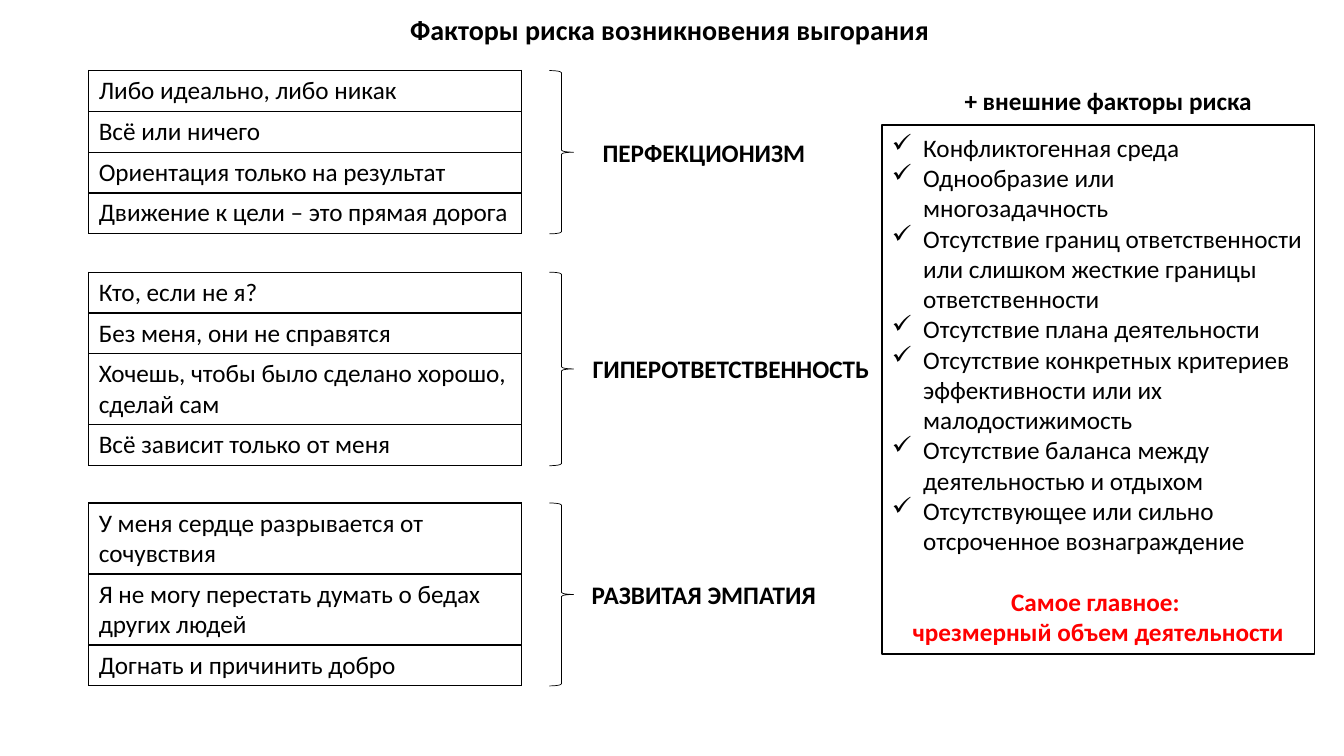
import pptx
import pptx.util
import pptx.dml.color
import pptx.enum.shapes
import pptx.enum.text
import pptx.oxml
import pptx.oxml.ns

RGBColor = pptx.dml.color.RGBColor
BLACK = RGBColor(0, 0, 0)
WHITE = RGBColor(255, 255, 255)
RED = RGBColor(255, 0, 0)

# The slide is a grid of square cells, 133.33 columns by 75 rows.
CELL = pptx.util.Inches(0.1)
COLS, ROWS = 133.33, 75

PANEL_W = 42.9
TABLE_X, BRACE_X, BRACE_W = 8.8, 54.5, 2.4
LABEL_H = 4
ONE_LINE, TWO_LINES = 4.05, 7.05
INDENT = pptx.util.Inches(0.31)

BODY = {"name": "Calibri", "size": pptx.util.Pt(18), "bold": False}
STRONG = {**BODY, "bold": True}
TITLE = {**STRONG, "size": pptx.util.Pt(20)}

# Top row, statements with row heights, label, label column and width
GROUPS = [
    (7, [("Либо идеально, либо никак", ONE_LINE),
         ("Всё или ничего", ONE_LINE),
         ("Ориентация только на результат", ONE_LINE),
         ("Движение к цели – это прямая дорога", ONE_LINE)],
     "ПЕРФЕКЦИОНИЗМ", 58.8, 22.3),
    (27, [("Кто, если не я?", ONE_LINE),
          ("Без меня, они не справятся", ONE_LINE),
          ("Хочешь, чтобы было сделано хорошо, сделай сам", TWO_LINES),
          ("Всё зависит только от меня", ONE_LINE)],
     "ГИПЕРОТВЕТСТВЕННОСТЬ", 57.8, 29.7),
    (49.9, [("У меня сердце разрывается от сочувствия", TWO_LINES),
            ("Я не могу перестать думать о бедах других людей", TWO_LINES),
            ("Догнать и причинить добро", ONE_LINE)],
     "РАЗВИТАЯ ЭМПАТИЯ", 57.7, 24.5),
]

EXTERNAL = [
    "Конфликтогенная среда",
    "Однообразие или многозадачность",
    "Отсутствие границ ответственности или слишком жесткие границы ответственности",
    "Отсутствие плана деятельности",
    "Отсутствие конкретных критериев эффективности или их малодостижимость",
    "Отсутствие баланса между деятельностью и отдыхом",
    "Отсутствующее или сильно отсроченное вознаграждение",
]
MAIN_POINT = ["Самое главное: ", "чрезмерный объем деятельности"]


def cells(*counts):
    return [round(n * CELL) for n in counts]


def write(p, text, fmt, color=BLACK):
    r = p.add_run()
    r.text = text
    for name, value in fmt.items():
        setattr(r.font, name, value)
    r.font.color.rgb = color


def add_label(s, text, x, y, w, h, fmt):
    tf = s.shapes.add_textbox(*cells(x, y, w, h)).text_frame
    tf.word_wrap = False
    tf.auto_size = pptx.enum.text.MSO_AUTO_SIZE.SHAPE_TO_FIT_TEXT
    write(tf.paragraphs[0], text, fmt)


def add_outline(s, kind, x, y, w, h, weight):
    """Add an unfilled preset shape with a black line."""
    sp = s.shapes.add_shape(kind, *cells(x, y, w, h))
    sp.shadow.inherit = False
    sp.fill.background()
    sp.line.color.rgb = BLACK
    sp.line.width = pptx.util.Pt(weight)
    return sp


def add_borders(cell):
    tc_pr = cell._tc.get_or_add_tcPr()
    for side in ("lnL", "lnR", "lnT", "lnB"):
        tc_pr.append(pptx.oxml.parse_xml(
            f'<a:{side} {pptx.oxml.ns.nsdecls("a")} w="12700"><a:solidFill>'
            f'<a:srgbClr val="{BLACK}"/></a:solidFill></a:{side}>'))


def add_statements(s, y, statements):
    """Add a one-column table and return its height in rows of the grid."""
    height = sum(h for _, h in statements)
    table = s.shapes.add_table(
        len(statements), 1, *cells(TABLE_X, y, PANEL_W, height)).table
    table.first_row = table.horz_banding = False
    for i, (text, h) in enumerate(statements):
        table.rows[i].height = cells(h)[0]
        cell = table.cell(i, 0)
        add_borders(cell)
        cell.fill.background()
        write(cell.text_frame.paragraphs[0], text, BODY)
    return height


def add_group(s, y, statements, label, label_x, label_w):
    height = add_statements(s, y, statements)
    add_outline(s, pptx.enum.shapes.MSO_SHAPE.RIGHT_BRACE,
                BRACE_X, y, BRACE_W, height, 0.5)
    add_label(s, label, label_x, y + (height - LABEL_H) / 2,
              label_w, LABEL_H, STRONG)


def add_check(p):
    p_pr = p._p.get_or_add_pPr()
    p_pr.set("marL", str(INDENT))
    p_pr.set("indent", str(-INDENT))
    p_pr.append(pptx.oxml.parse_xml(
        f'<a:buChar {pptx.oxml.ns.nsdecls("a")} char="✓"/>'))


def add_external_panel(s, x, y, h):
    sp = add_outline(s, pptx.enum.shapes.MSO_SHAPE.RECTANGLE,
                     x, y, PANEL_W, h, 1)
    sp.fill.solid()
    sp.fill.fore_color.rgb = WHITE
    tf = sp.text_frame
    tf.word_wrap = True
    tf.auto_size = pptx.enum.text.MSO_AUTO_SIZE.SHAPE_TO_FIT_TEXT
    for i, text in enumerate(EXTERNAL):
        p = tf.add_paragraph() if i else tf.paragraphs[0]
        p.alignment = pptx.enum.text.PP_ALIGN.LEFT
        add_check(p)
        write(p, text, BODY)
    for i, text in enumerate(MAIN_POINT):
        p = tf.add_paragraph()
        p.alignment = pptx.enum.text.PP_ALIGN.CENTER
        p.space_before = pptx.util.Pt(0 if i else 22)
        write(p, text, STRONG, RED)


def main():
    prs = pptx.Presentation()
    prs.slide_width, prs.slide_height = cells(COLS, ROWS)
    s = prs.slides.add_slide(prs.slide_layouts[6])
    add_label(s, "Факторы риска возникновения выгорания",
              39.7, 0.7, 53.9, 4.4, TITLE)
    for group in GROUPS:
        add_group(s, *group)
    add_external_panel(s, 87.5, 12.4, 52.5)
    add_label(s, "+ внешние факторы риска", 94.7, 8, 30.8, LABEL_H, STRONG)
    prs.save("out.pptx")


if __name__ == "__main__":
    main()
